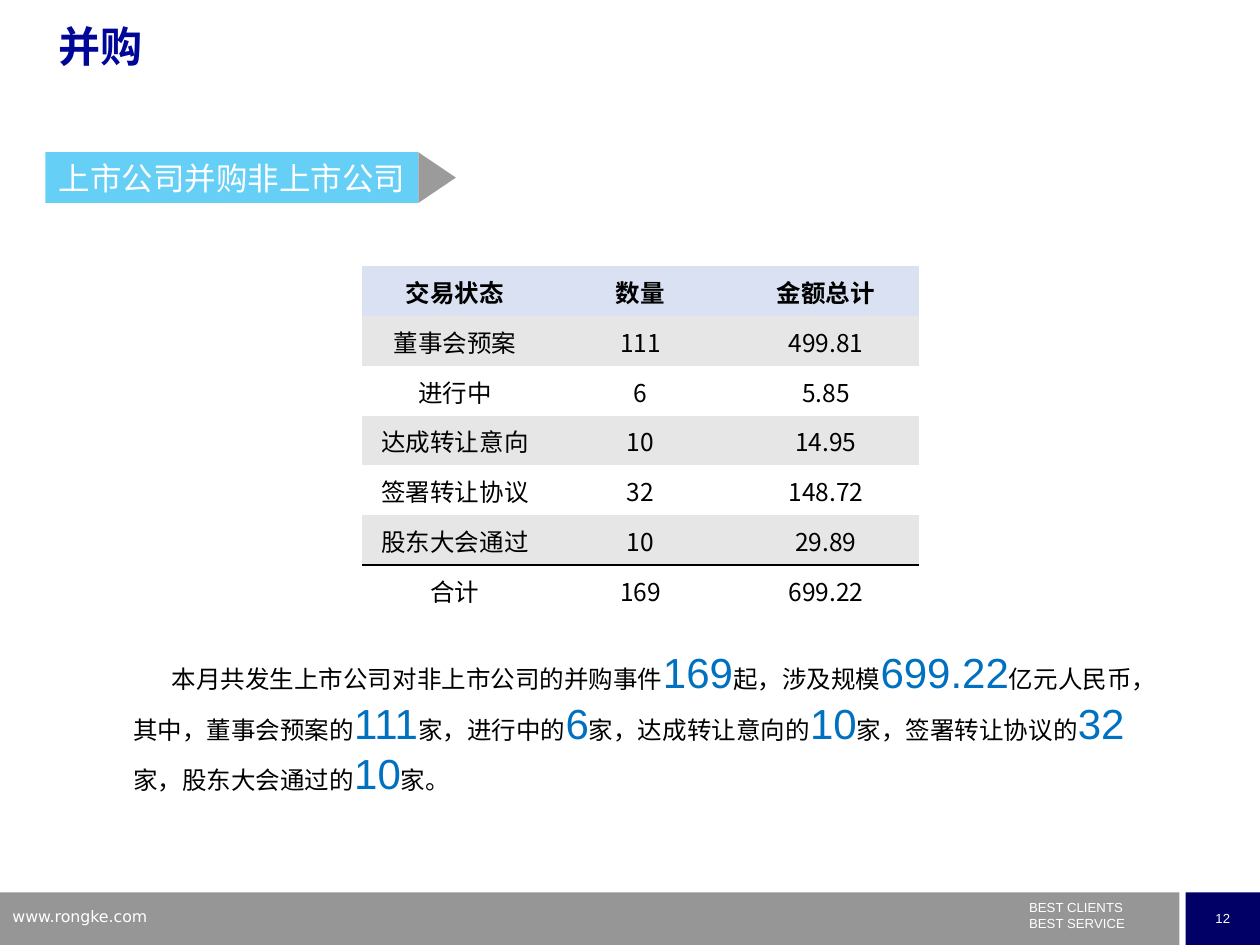
from pptx import Presentation
from pptx.dml.color import RGBColor
from pptx.enum import shapes as kinds, text as styles
from pptx.oxml import parse_xml
from pptx.oxml.ns import nsdecls, qn
from pptx.util import Pt

WHITE = RGBColor(0xFF, 0xFF, 0xFF)
BLACK = RGBColor(0x00, 0x00, 0x00)
NAVY = RGBColor(0x00, 0x00, 0x66)
TITLE_BLUE = RGBColor(0x00, 0x07, 0x98)
FIGURE_BLUE = RGBColor(0x00, 0x70, 0xC0)
SKY = RGBColor(0x00, 0xB0, 0xF0)
DARK_GREY = RGBColor(0x59, 0x59, 0x59)
FOOTER_GREY = RGBColor(0x96, 0x96, 0x96)
HEADER_FILL = RGBColor(0xD9, 0xE1, 0xF2)
BAND_FILL = RGBColor(0xE7, 0xE6, 0xE6)

LATIN, CHINESE, WEB = "Arial", "Noto Sans CJK SC", "DejaVu Sans"
PLAIN_TABLE = "{2D5ABB26-0587-4C30-8999-92F81FD0307C}"
LEFT, CENTER = styles.PP_ALIGN.LEFT, styles.PP_ALIGN.CENTER
TOP, MIDDLE = styles.MSO_ANCHOR.TOP, styles.MSO_ANCHOR.MIDDLE

DEALS = [
    ("交易状态", "数量", "金额总计"),
    ("董事会预案", "111", "499.81"),
    ("进行中", "6", "5.85"),
    ("达成转让意向", "10", "14.95"),
    ("签署转让协议", "32", "148.72"),
    ("股东大会通过", "10", "29.89"),
    ("合计", "169", "699.22"),
]
# Words and figures alternate
SUMMARY = ["本月共发生上市公司对非上市公司的并购事件", "169", "起，涉及规模", "699.22",
           "亿元人民币，其中，董事会预案的", "111", "家，进行中的", "6",
           "家，达成转让意向的", "10", "家，签署转让协议的", "32",
           "家，股东大会通过的", "10", "家。"]


def add_run(paragraph, words, size, color, font=LATIN, bold=False):
    run = paragraph.add_run()
    run.text = words
    run.font.size, run.font.bold, run.font.name = Pt(size), bold, font
    run.font.color.rgb = color
    properties = run.font._element
    properties.append(parse_xml(f'<a:ea {nsdecls("a")} typeface="{CHINESE}"/>'))


def write(frame, *lines, align=LEFT, anchor=TOP, wrap=True, spacing=None, before=0, **font):
    frame.word_wrap = wrap
    frame.vertical_anchor = anchor
    for i, words in enumerate(lines):
        paragraph = frame.add_paragraph() if i else frame.paragraphs[0]
        paragraph.alignment = align
        if spacing:
            paragraph.line_spacing = spacing
        if i and before:
            paragraph.space_before = Pt(before)
        add_run(paragraph, words, **font)


def add_box(parent, box, color, kind=kinds.MSO_SHAPE.RECTANGLE, opacity=None):
    shape = parent.shapes.add_shape(kind, *map(Pt, box))
    shape.shadow.inherit = False
    shape.fill.solid()
    shape.fill.fore_color.rgb = color
    shape.line.fill.background()
    if opacity:
        fill = shape._element.spPr.find(qn("a:solidFill"))
        fill[0].append(parse_xml(f'<a:alpha {nsdecls("a")} val="{opacity * 1000}"/>'))
    return shape


def add_text(slide, box, *lines, **options):
    frame = slide.shapes.add_textbox(*map(Pt, box)).text_frame
    write(frame, *lines, **options)


def add_footer(slide, left, top, width, height):
    page_width, gap = 42.5, 3.5
    add_box(slide, (left, top, width - page_width - gap, height), FOOTER_GREY)
    page = add_box(slide, (left + width - page_width, top, page_width, height), NAVY)
    write(page.text_frame, "12", align=CENTER, anchor=MIDDLE, wrap=False, size=7.5, color=WHITE)
    add_text(slide, (left + 581, top + 4.5, 108, 21), "BEST CLIENTS", "BEST SERVICE",
             spacing=0.5, before=4.3, size=7.5, color=WHITE)
    add_text(slide, (left, top + 4.5, 173, 19), "www.rongke.com",
             size=9, color=WHITE, font=WEB)


def add_banner(slide, left, top, width, height):
    tip_width = 21.5
    body_width = width - tip_width
    banner = slide.shapes.add_group_shape()
    label = add_box(banner, (left, top, body_width, height), SKY, opacity=60)
    write(label.text_frame, "上市公司并购非上市公司", align=CENTER, anchor=MIDDLE,
          size=18, color=WHITE, font=CHINESE)
    # The tip is a triangle turned a quarter about its centre
    shift = (height - tip_width) / 2
    tip = add_box(banner, (left + body_width - shift, top + shift, height, tip_width),
                  DARK_GREY, kinds.MSO_SHAPE.ISOSCELES_TRIANGLE, opacity=60)
    tip.rotation = 90


def add_rule(cell, side):
    cell._tc.get_or_add_tcPr().insert(0, parse_xml(
        f'<a:{side} {nsdecls("a")} w="12700"><a:solidFill>'
        f'<a:srgbClr val="{BLACK}"/></a:solidFill></a:{side}>'))


def add_deal_table(slide, left, top, width, height):
    total = len(DEALS) - 1
    table = slide.shapes.add_table(len(DEALS), len(DEALS[0]),
                                   *map(Pt, (left, top, width, height))).table
    table._tbl.tblPr.find(qn("a:tableStyleId")).text = PLAIN_TABLE
    table.horz_banding = False
    for r, deal in enumerate(DEALS):
        table.rows[r].height = Pt(height / len(DEALS))
        for c, words in enumerate(deal):
            cell = table.cell(r, c)
            cell.margin_left = cell.margin_right = cell.margin_top = Pt(0.75)
            cell.margin_bottom = 0
            cell.vertical_anchor = MIDDLE
            cell.fill.solid()
            cell.fill.fore_color.rgb = HEADER_FILL if r == 0 else BAND_FILL if r % 2 else WHITE
            write(cell.text_frame, words, align=CENTER, anchor=MIDDLE,
                  size=14, color=BLACK, font=CHINESE, bold=r == 0)
            # Rule above the total
            if r == total - 1:
                add_rule(cell, "lnB")
            elif r == total:
                add_rule(cell, "lnT")


def add_summary(slide, *box):
    frame = slide.shapes.add_textbox(*map(Pt, box)).text_frame
    frame.word_wrap = True
    paragraph = frame.paragraphs[0]
    paragraph._p.get_or_add_pPr().set("indent", str(Pt(22)))
    for i, words in enumerate(SUMMARY):
        if i % 2:
            add_run(paragraph, words, 24, FIGURE_BLUE)
        else:
            add_run(paragraph, words, 14, BLACK, CHINESE)


def main():
    deck = Presentation()
    deck.slide_width, deck.slide_height = Pt(720), Pt(540)
    slide = deck.slides.add_slide(deck.slide_layouts[6])
    add_footer(slide, 0, 510, 720, 30)
    add_banner(slide, 26, 87, 234.5, 29)
    add_text(slide, (26.5, 11.5, 648, 50), "并购",
             spacing=0.9, size=24, color=TITLE_BLUE, bold=True)
    add_summary(slide, 69, 366, 593, 94)
    add_deal_table(slide, 207, 152, 318, 199.5)
    deck.save("out.pptx")


if __name__ == "__main__":
    main()
